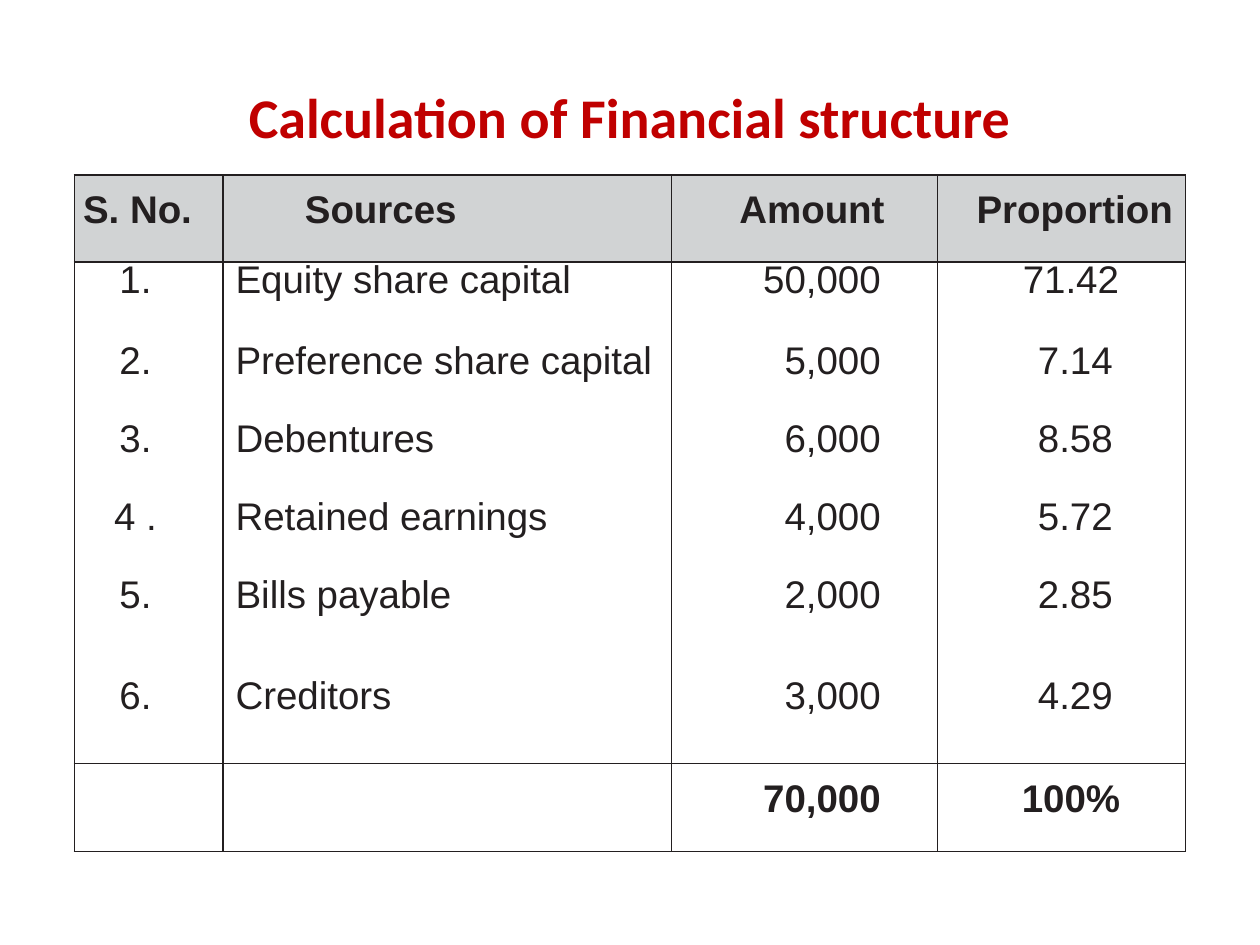
from lxml import etree
from pptx import Presentation
from pptx import util as u
from pptx.dml.color import RGBColor
from pptx.enum import text
from pptx.oxml import ns

INK, RED, GREY = "231F20", "C00000", "D1D3D4"
LEFT, CENTER, RIGHT = text.PP_ALIGN.LEFT, text.PP_ALIGN.CENTER, text.PP_ALIGN.RIGHT

COLUMNS = [1.18, 3.56, 2.11, 1.97]
ROWS = [0.69, 0.82, 0.62, 0.62, 0.62, 0.62, 0.68, 0.7]
TOP_MARGINS = [0.31, 0.18, 0, 0, 0, 0, 0.18, 0.32]
RULED_BELOW = {0, 6, 7}
RECORDS = [
    ("S. No.", "Sources", "Amount", "Proportion"),
    ("1.", "Equity share capital", "50,000", "71.42"),
    ("2.", "Preference share capital", "5,000", "7.14"),
    ("3.", "Debentures", "6,000", "8.58"),
    ("4 .", "Retained earnings", "4,000", "5.72"),
    ("5.", "Bills payable", "2,000", "2.85"),
    ("6.", "Creditors", "3,000", "4.29"),
    ("", "", "70,000", "100%"),
]
# Alignment, left margin and right margin of each column
HEADER_LAYOUT = [(LEFT, 0.07, 0), (LEFT, 0.65, 0), (RIGHT, 0, 0.42), (CENTER, 0.21, 0)]
BODY_LAYOUT = [(CENTER, 0, 0.21), (LEFT, 0.1, 0), (RIGHT, 0, 0.45), (CENTER, 0.22, 0)]
WIDE_FIGURE_LAYOUT = BODY_LAYOUT[:3] + [(CENTER, 0.15, 0)]
LAYOUTS = [HEADER_LAYOUT, WIDE_FIGURE_LAYOUT] + [BODY_LAYOUT] * 5 + [WIDE_FIGURE_LAYOUT]


def color(value):
    return RGBColor.from_string(value)


def style(para, name, size, value, bold, align):
    para.alignment = align
    para.font.name, para.font.size, para.font.bold = name, u.Pt(size), bold
    para.font.color.rgb = color(value)


def set_borders(cell, ruled_sides):
    props = cell._tc.get_or_add_tcPr()
    for side in "LRTB":
        line = etree.SubElement(props, ns.qn("a:ln" + side), w=str(u.Pt(1)))
        if side in ruled_sides:
            fill = etree.SubElement(line, ns.qn("a:solidFill"))
            etree.SubElement(fill, ns.qn("a:srgbClr"), val=INK)
        else:
            etree.SubElement(line, ns.qn("a:noFill"))


def add_title(page, box):
    frame = page.shapes.add_textbox(*box).text_frame
    frame.word_wrap = True
    frame.vertical_anchor = text.MSO_ANCHOR.MIDDLE
    frame.text = "Calculation of Financial structure"
    style(frame.paragraphs[0], "Calibri", 32, RED, True, CENTER)


def fill_cell(cell, wording, layout, top, bold):
    align, left, right = layout
    cell.margin_left, cell.margin_right = u.Inches(left), u.Inches(right)
    cell.margin_top, cell.margin_bottom = u.Inches(top), 0
    cell.text = wording
    para = cell.text_frame.paragraphs[0]
    para.line_spacing = u.Pt(9.9)
    style(para, "Arial", 22, INK, bold, align)


def add_structure_table(page, box):
    table = page.shapes.add_table(len(ROWS), len(COLUMNS), *box).table
    table.first_row = table.horz_banding = False
    for column, share in zip(table.columns, COLUMNS):
        column.width = int(box[2] * share / sum(COLUMNS))
    for row, share in zip(table.rows, ROWS):
        row.height = int(box[3] * share / sum(ROWS))

    last = len(ROWS) - 1
    for r, record in enumerate(RECORDS):
        sides = "LR"
        if r == 0 or r - 1 in RULED_BELOW:
            sides += "T"
        if r in RULED_BELOW:
            sides += "B"
        for c, wording in enumerate(record):
            cell = table.cell(r, c)
            fill_cell(cell, wording, LAYOUTS[r][c], TOP_MARGINS[r], r in (0, last))
            set_borders(cell, sides)
            if r == 0:
                cell.fill.solid()
                cell.fill.fore_color.rgb = color(GREY)
            else:
                cell.fill.background()


def main():
    deck = Presentation()
    deck.slide_width, deck.slide_height = u.Inches(10), u.Inches(7.5)
    page = deck.slides.add_slide(deck.slide_layouts[6])

    # Heading, then the table of sources
    add_title(page, [u.Inches(n) for n in (0.5, 0.3, 9, 1.25)])
    add_structure_table(page, [u.Inches(n) for n in (0.59, 1.39, sum(COLUMNS), sum(ROWS))])
    deck.save("out.pptx")


if __name__ == "__main__":
    main()
